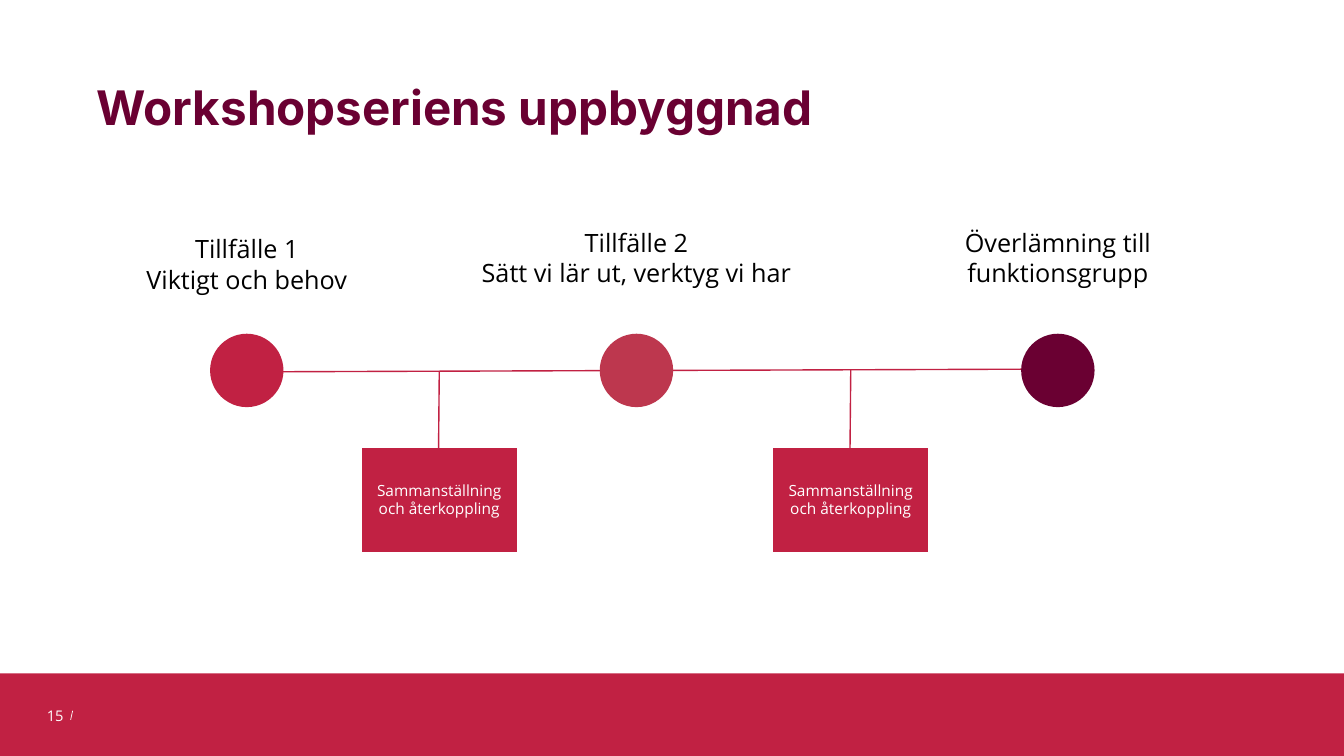
from lxml import etree
from pptx import Presentation
from pptx import util as u
from pptx.dml.color import RGBColor
from pptx.enum import shapes, text
from pptx.oxml import ns

CRIMSON = RGBColor(0xC1, 0x21, 0x43)
ROSE = RGBColor(0xBD, 0x37, 0x4E)
PLUM = RGBColor(0x6A, 0x00, 0x32)
BLACK = RGBColor(0, 0, 0)
WHITE = RGBColor(0xFF, 0xFF, 0xFF)

SLIDE_W, SLIDE_H = 33.87, 19.05
CIRCLE = 1.85
# Centre, circle colour, label top, label width, label lines
STAGES = [
    (6.22, CRIMSON, 5.89, 5.31, ["Tillfälle 1", "Viktigt och behov"]),
    (16.04, ROSE, 5.72, 7.95, ["Tillfälle 2", "Sätt vi lär ut, verktyg vi har"]),
    (26.66, PLUM, 5.72, 7.95, ["Överlämning till funktionsgrupp"]),
]
# Centre of each feedback box and the height where its stem leaves the timeline
FEEDBACK = [(11.07, 9.37), (21.44, 9.3)]


def add_shape(page, kind, left, top, width, height, color):
    shape = page.shapes.add_shape(kind, u.Cm(left), u.Cm(top), u.Cm(width), u.Cm(height))
    shape.shadow.inherit = False
    shape.fill.solid()
    shape.fill.fore_color.rgb = color
    shape.line.fill.background()
    return shape


def add_line(page, x1, y1, x2, y2, color=CRIMSON, width=1):
    line = page.shapes.add_connector(
        shapes.MSO_CONNECTOR.STRAIGHT, u.Cm(x1), u.Cm(y1), u.Cm(x2), u.Cm(y2))
    line.line.color.rgb = color
    line.line.width = u.Pt(width)
    etree.SubElement(line._element.spPr, ns.qn("a:effectLst"))


def write(frame, lines, size, color, align, font="Open Sans"):
    frame.word_wrap = True
    for index, line in enumerate(lines):
        para = frame.add_paragraph() if index else frame.paragraphs[0]
        para.text = line
        para.alignment = align
        para.font.name = font
        para.font.size = u.Pt(size)
        para.font.color.rgb = color


def clear_margins(frame):
    frame.margin_left = frame.margin_top = frame.margin_right = frame.margin_bottom = 0


def add_footer(page, left, top, width, height):
    add_shape(page, shapes.MSO_SHAPE.RECTANGLE, left, top, width, height, CRIMSON)
    add_line(page, left + 1.83, top + 0.94, left + 1.78, top + 1.17, WHITE, 0.5)
    number = page.shapes.add_textbox(
        u.Cm(left + 0.76), u.Cm(top + 0.56), u.Cm(1.09), u.Cm(1.02))
    number.text_frame.vertical_anchor = text.MSO_ANCHOR.MIDDLE
    write(number.text_frame, ["15"], 10.5, WHITE, text.PP_ALIGN.RIGHT)


def add_title(page, left, top, width, height):
    title = page.shapes.title
    title.left, title.top = u.Cm(left), u.Cm(top)
    title.width, title.height = u.Cm(width), u.Cm(height)
    frame = title.text_frame
    clear_margins(frame)
    frame.auto_size = text.MSO_AUTO_SIZE.NONE
    frame.vertical_anchor = text.MSO_ANCHOR.BOTTOM
    write(frame, ["Workshopseriens uppbyggnad"], 34, PLUM, text.PP_ALIGN.LEFT, "Inter")
    frame.paragraphs[0].font.bold = True
    frame.paragraphs[0].line_spacing = 0.9


def add_stage(page, centre, circle_top, color, label_top, label_width, lines):
    add_shape(page, shapes.MSO_SHAPE.OVAL, centre - CIRCLE / 2, circle_top,
              CIRCLE, CIRCLE, color)
    label = page.shapes.add_textbox(
        u.Cm(centre - label_width / 2), u.Cm(label_top), u.Cm(label_width), u.Cm(1.55))
    clear_margins(label.text_frame)
    label.text_frame.auto_size = text.MSO_AUTO_SIZE.SHAPE_TO_FIT_TEXT
    write(label.text_frame, lines, 18, BLACK, text.PP_ALIGN.CENTER)


def add_feedback(page, centre, stem_top, top, width, height):
    box = add_shape(page, shapes.MSO_SHAPE.LINE_CALLOUT_1, centre - width / 2, top,
                    width, height, CRIMSON)
    box.text_frame.vertical_anchor = text.MSO_ANCHOR.MIDDLE
    write(box.text_frame, ["Sammanställning och återkoppling"], 11, WHITE,
          text.PP_ALIGN.CENTER)
    add_line(page, centre - 0.02, stem_top + 2.13, centre, stem_top)


def main():
    deck = Presentation()
    deck.slide_width, deck.slide_height = u.Cm(SLIDE_W), u.Cm(SLIDE_H)
    page = deck.slides.add_slide(deck.slide_layouts[5])

    # Footer band and title
    add_footer(page, 0, 16.97, SLIDE_W, SLIDE_H - 16.97)
    add_title(page, 2.44, 0.23, 29.36, 3.2)

    # Timeline with its stages
    add_line(page, 6.58, 9.37, 26.62, 9.3)
    for centre, color, label_top, label_width, lines in STAGES:
        add_stage(page, centre, 8.41, color, label_top, label_width, lines)

    # Feedback boxes between the stages
    for centre, stem_top in FEEDBACK:
        add_feedback(page, centre, stem_top, 11.28, 3.91, 2.62)

    deck.save("out.pptx")


if __name__ == "__main__":
    main()
